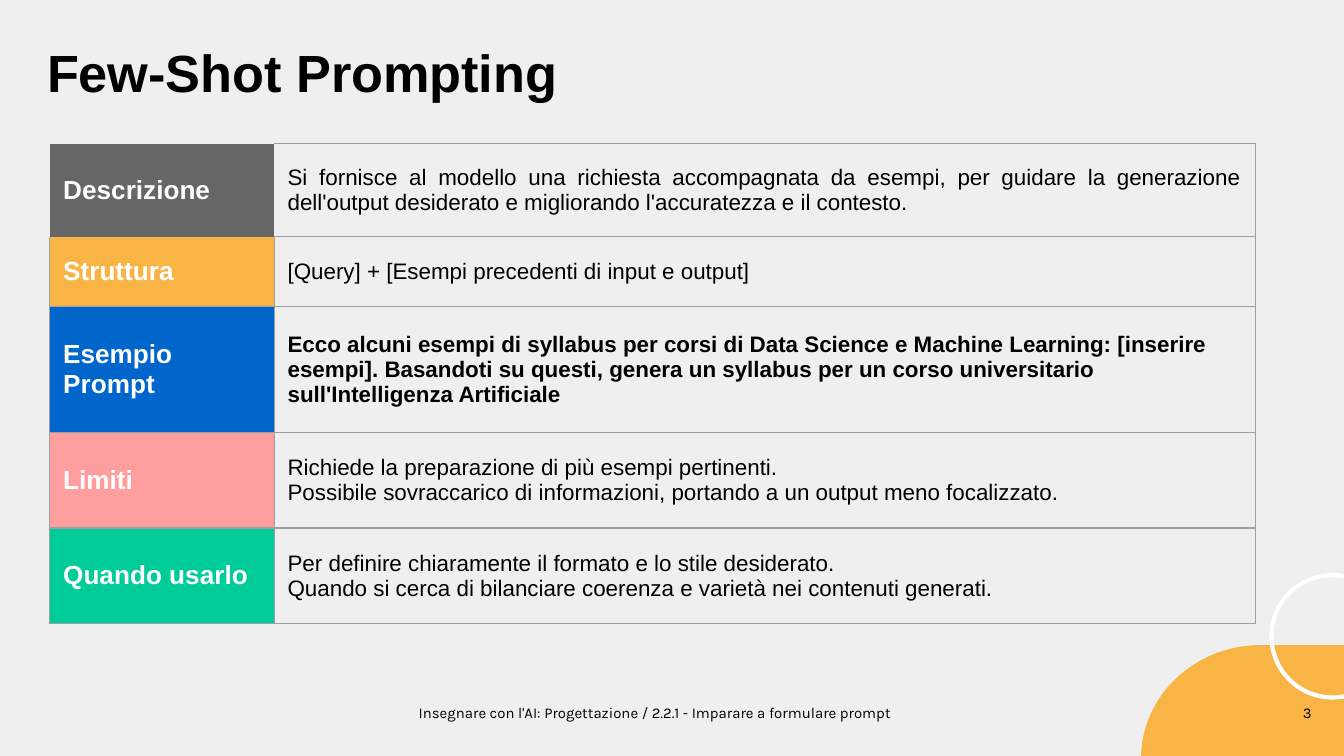
from dataclasses import dataclass

from lxml.etree import SubElement
from pptx import Presentation
from pptx.dml.color import RGBColor
from pptx.enum.shapes import MSO_SHAPE as Preset
from pptx.enum.text import MSO_ANCHOR as Anchor, MSO_AUTO_SIZE as AutoSize, PP_ALIGN as Align
from pptx.oxml.ns import qn
from pptx.util import Inches, Pt


@dataclass(frozen=True)
class Theme:
    background: str = "EFEFEF"
    ink: str = "000000"
    light: str = "FFFFFF"
    border: str = "9E9E9E"
    gray: str = "666666"
    amber: str = "F8B546"
    blue: str = "0066CC"
    pink: str = "FF9E9E"
    green: str = "00CC99"
    main_font: str = "Arial"
    footer_font: str = "Karla"
    title_size: float = 28
    label_size: float = 14
    body_size: float = 12
    footer_size: float = 8
    border_width: float = 0.75
    ring_width: float = 2.25


THEME = Theme()
WIDTH, HEIGHT = Inches(10), Inches(5.625)
COLUMN_SHARES = (16.7, 73)
ROWS = (
    ("Descrizione", THEME.gray, 12.27, Align.JUSTIFY, False, (
        "Si fornisce al modello una richiesta accompagnata da esempi, per guidare la generazione "
        "dell'output desiderato e migliorando l'accuratezza e il contesto.",)),
    ("Struttura", THEME.amber, 9.24, Align.LEFT, False, (
        "[Query] + [Esempi precedenti di input e output]",)),
    ("Esempio Prompt", THEME.blue, 16.71, Align.LEFT, True, (
        "Ecco alcuni esempi di syllabus per corsi di Data Science e Machine Learning: "
        "[inserire esempi]. Basandoti su questi, genera un syllabus per un corso "
        "universitario sull'Intelligenza Artificiale",)),
    ("Limiti", THEME.pink, 12.62, Align.LEFT, False, (
        "Richiede la preparazione di più esempi pertinenti.",
        "Possibile sovraccarico di informazioni, portando a un output meno focalizzato.")),
    ("Quando usarlo", THEME.green, 12.62, Align.LEFT, False, (
        "Per definire chiaramente il formato e lo stile desiderato.",
        "Quando si cerca di bilanciare coerenza e varietà nei contenuti generati.")),
)


def across(share):
    return round(WIDTH * share / 100)


def down(share):
    return round(HEIGHT * share / 100)


def box(left, top, width, height):
    return across(left), down(top), across(width), down(height)


def apply_format(target, values):
    for name, value in values.items():
        setattr(target, name, value)


def margins(inches):
    sides = ("left", "top", "right", "bottom")
    return {f"margin_{side}": Inches(inches) for side in sides}


def fill_solid(target, color):
    target.fill.solid()
    target.fill.fore_color.rgb = RGBColor.from_string(color)


def write(frame, lines, size, color, font, bold=False, align=Align.LEFT):
    frame.text = "\n".join(lines)
    for paragraph in frame.paragraphs:
        paragraph.alignment = align
        apply_format(paragraph.font, {"size": Pt(size), "name": font, "bold": bold})
        paragraph.font.color.rgb = RGBColor.from_string(color)


def add_title(slide, text):
    title = slide.shapes.title
    apply_format(title, dict(zip(("left", "top", "width", "height"), box(2.5, 3.2, 89.7, 12.44))))
    frame = title.text_frame
    write(frame, (text,), THEME.title_size, THEME.ink, THEME.main_font, True)
    apply_format(frame, {**margins(0.1), "vertical_anchor": Anchor.MIDDLE,
                         "auto_size": AutoSize.NONE, "word_wrap": True})


def add_footer_text(slide, text, place, align):
    frame = slide.shapes.add_textbox(*box(*place)).text_frame
    apply_format(frame, {**margins(0.07), "word_wrap": True})
    write(frame, (text,), THEME.footer_size, THEME.ink, THEME.footer_font, align=align)


def add_decoration(slide, preset, place, fill=None, line=None, rotation=0):
    shape = slide.shapes.add_shape(preset, *box(*place))
    shape.rotation = rotation
    shape.shadow.inherit = False
    if fill:
        fill_solid(shape, fill)
    else:
        shape.fill.background()
    if line:
        fill_solid(shape.line, line)
        shape.line.width = Pt(THEME.ring_width)
    else:
        shape.line.fill.background()


def set_borders(cell, visible):
    properties = cell._tc.get_or_add_tcPr()
    for index, side in enumerate("LRTB"):
        line = SubElement(properties, qn(f"a:ln{side}"), w=str(Pt(THEME.border_width)))
        if side in visible:
            solid = SubElement(line, qn("a:solidFill"))
            SubElement(solid, qn("a:srgbClr"), val=THEME.border)
        else:
            SubElement(line, qn("a:noFill"))
        properties.insert(index, line)


def format_cell(cell, lines, size, color, bold, align, fill, borders):
    apply_format(cell, {**margins(0.1), "vertical_anchor": Anchor.MIDDLE})
    write(cell.text_frame, lines, size, color, THEME.main_font, bold, align)
    if fill:
        fill_solid(cell, fill)
    else:
        cell.fill.background()
    set_borders(cell, borders)


def add_prompt_table(slide):
    place = box(3.7, 19.02, sum(COLUMN_SHARES), sum(row[2] for row in ROWS))
    table = slide.shapes.add_table(len(ROWS), len(COLUMN_SHARES), *place).table
    apply_format(table, {"first_row": False, "horz_banding": False})
    for column, share in zip(table.columns, COLUMN_SHARES):
        column.width = across(share)
    for index, (label, color, share, align, bold, lines) in enumerate(ROWS):
        table.rows[index].height = down(share)
        label_borders, body_borders = ("LRTB", "LRTB") if index else ("", "RTB")
        if index == 1:
            label_borders = "LRB"
        format_cell(table.cell(index, 0), (label,), THEME.label_size, THEME.light,
                    True, align, color, label_borders)
        format_cell(table.cell(index, 1), lines, THEME.body_size, THEME.ink,
                    bold, align, None, body_borders)


def main():
    presentation = Presentation()
    apply_format(presentation, {"slide_width": WIDTH, "slide_height": HEIGHT})
    slide = presentation.slides.add_slide(presentation.slide_layouts[5])
    fill_solid(slide.background, THEME.background)
    add_footer_text(slide, "Insegnare con l'AI: Progettazione / 2.2.1 - Imparare a formulare prompt",
                    (3.8, 91.91, 89.9, 5.16), Align.CENTER)
    add_decoration(slide, Preset.FLOWCHART_DELAY, (84.9, 85.33, 17.8, 30.04),
                   fill=THEME.amber, rotation=180)
    add_decoration(slide, Preset.OVAL, (94.6, 76.09, 9.1, 16.18), line=THEME.light)
    add_footer_text(slide, "3", (92.2, 91.91, 6.1, 8.18), Align.RIGHT)
    add_title(slide, "Few-Shot Prompting")
    add_prompt_table(slide)
    presentation.save("out.pptx")


if __name__ == "__main__":
    main()
